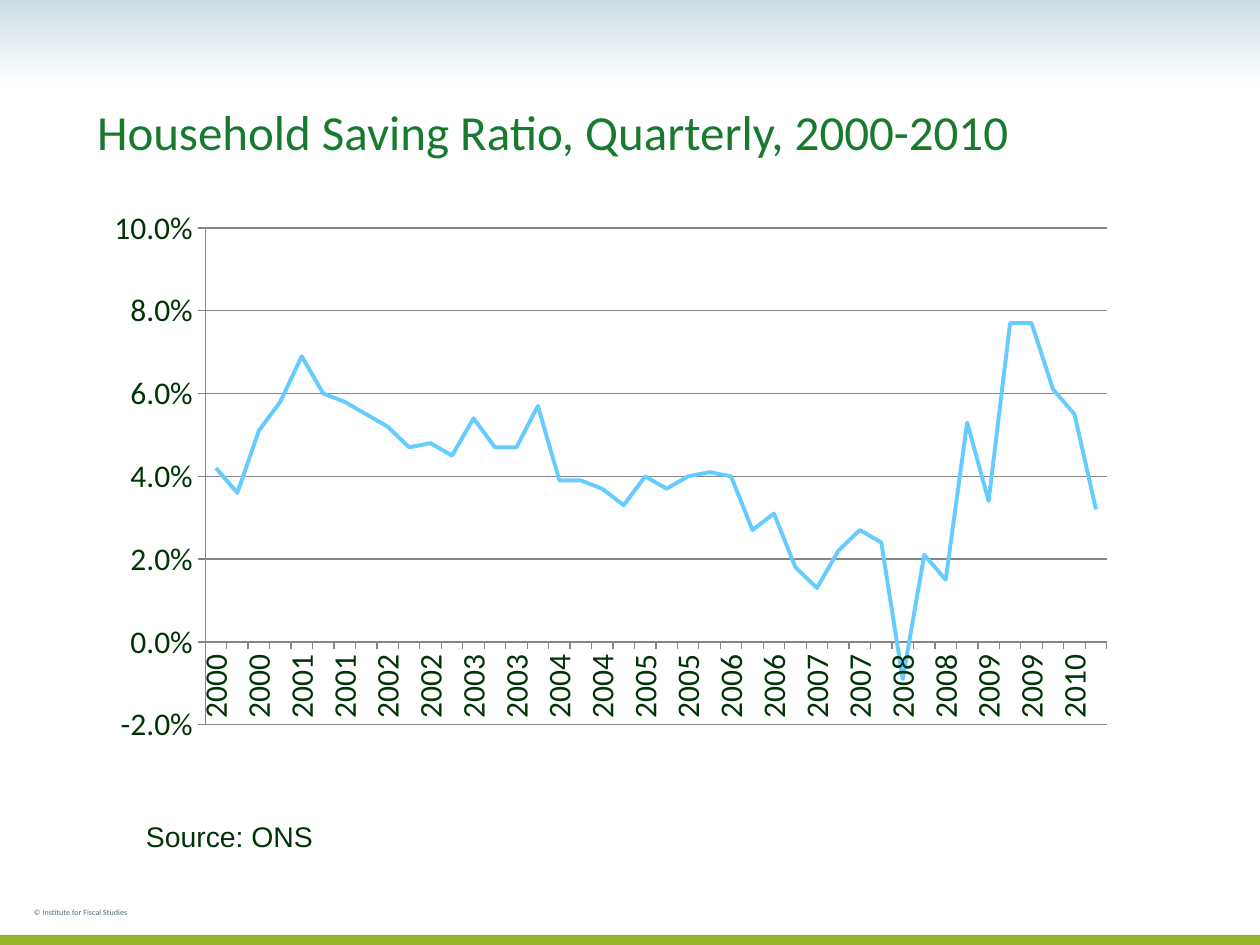
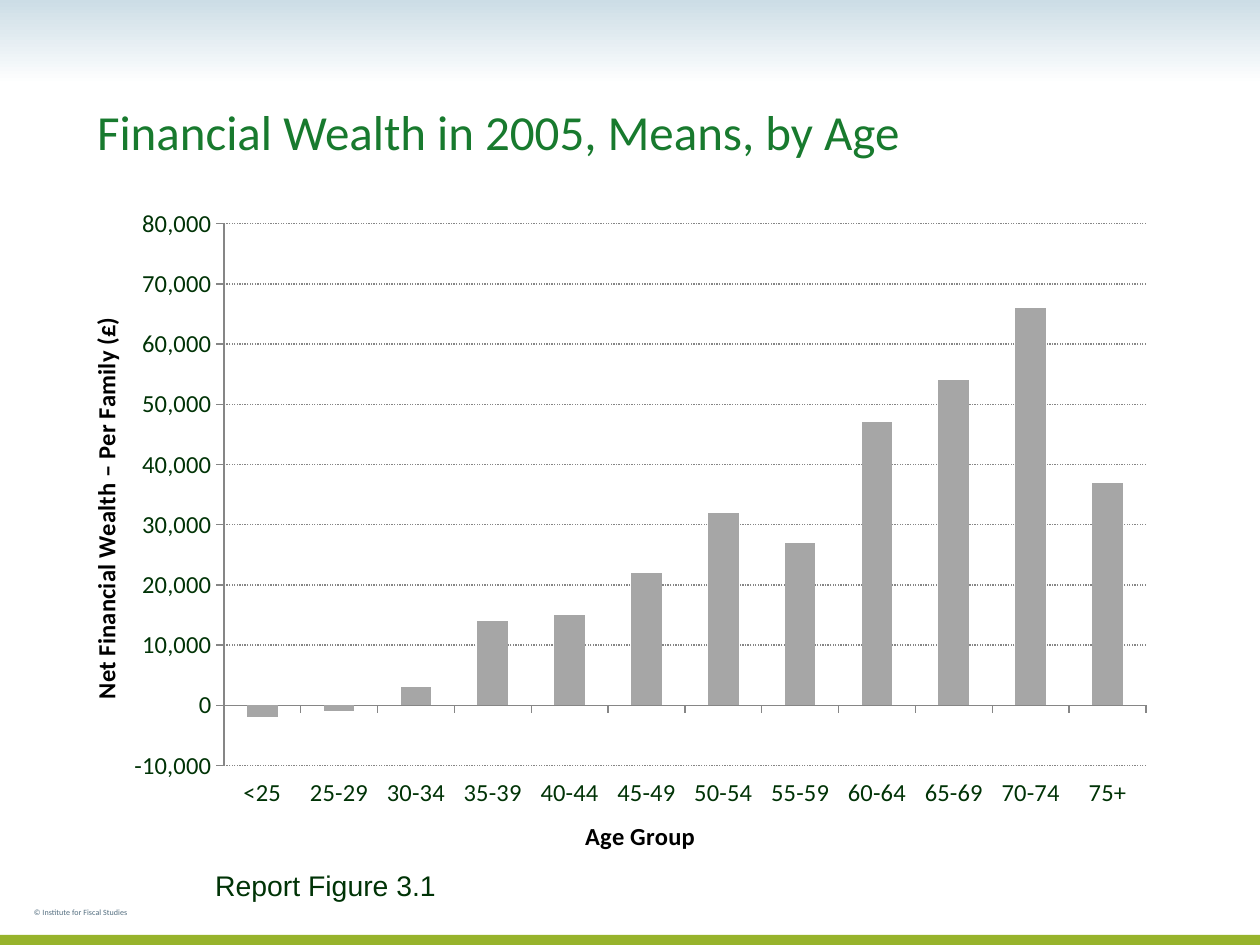
import pptx
import pptx.chart.data
import pptx.dml.color
import pptx.enum.chart
import pptx.enum.dml
import pptx.enum.shapes
import pptx.enum.text
import pptx.oxml
import pptx.oxml.ns
import pptx.util

Inches, Pt = pptx.util.Inches, pptx.util.Pt
Chart = pptx.enum.chart
HUES = {"sky": "CCDDE6", "white": "FFFFFF", "lime": "97B32C", "slate": "526D7F",
        "title": "187A2E", "ink": "003306", "black": "000000", "axis": "868686",
        "line": "66CCFF", "bar": "A6A6A6"}
SAVING = [4.2, 3.6, 5.1, 5.8, 6.9, 6, 5.8, 5.5, 5.2, 4.7, 4.8, 4.5, 5.4, 4.7,
          4.7, 5.7, 3.9, 3.9, 3.7, 3.3, 4, 3.7, 4, 4.1, 4, 2.7, 3.1, 1.8, 1.3,
          2.2, 2.7, 2.4, -0.9, 2.1, 1.5, 5.3, 3.4, 7.7, 7.7, 6.1, 5.5, 3.2]
WEALTH = [-2, -1, 3, 14, 15, 22, 32, 27, 47, 54, 66, 37]
AGES = ["<25", *(f"{age}-{age + 4}" for age in range(25, 75, 5)), "75+"]


def hue(name):
    """Return the named colour."""
    return pptx.dml.color.RGBColor.from_string(HUES[name])


def write(frame, text, size, color, face="Calibri", bold=False, sub=False):
    """Put one formatted paragraph into a text frame."""
    para = frame.paragraphs[0]
    run = para.add_run()
    run.text = text
    font = run.font
    font.name, font.size, font.bold = face, Pt(size), bold
    font.color.rgb = hue(color)
    if sub:
        run._r.get_or_add_rPr().set("baseline", "-25000")
    return para


def note(slide, box, text, size, color, **style):
    """Add a wrapped text box."""
    frame = slide.shapes.add_textbox(*map(Inches, box)).text_frame
    frame.word_wrap = True
    write(frame, text, size, color, **style)


def band(slide, box, *colors):
    """Add a full-width band with one colour or a downward fade."""
    shape = slide.shapes.add_shape(
        pptx.enum.shapes.MSO_SHAPE.RECTANGLE, *map(Inches, box))
    shape.shadow.inherit = False
    shape.line.fill.background()
    if len(colors) == 1:
        shape.fill.solid()
        shape.fill.fore_color.rgb = hue(colors[0])
        return
    shape.fill.gradient()
    shape.fill.gradient_angle = 270
    for place, (stop, color) in enumerate(zip(shape.fill.gradient_stops, colors)):
        stop.position = place
        stop.color.rgb = hue(color)


def page(deck, title):
    """Add a slide with bands, title and footer."""
    slide = deck.slides.add_slide(deck.slide_layouts[5])
    band(slide, (0, 0, 10, 0.67), "sky", "white")
    band(slide, (0, 7.42, 10, 0.08), "lime")
    head = slide.shapes.title
    head.left, head.top, head.width, head.height = map(Inches, (0.67, 0.25, 8.58, 1.08))
    head.text_frame.vertical_anchor = pptx.enum.text.MSO_ANCHOR.BOTTOM
    para = write(head.text_frame, title, 28, "title")
    para.alignment = pptx.enum.text.PP_ALIGN.LEFT
    para.line_spacing = 0.9
    note(slide, (0.17, 7.08, 2.75, 0.25), "© Institute for Fiscal Studies",
         8, "slate", sub=True)
    return slide


def place(chart, inner):
    """Fix the inner plot area as fractions of the chart."""
    area = chart._chartSpace.chart.plotArea
    for old in area.findall(pptx.oxml.ns.qn("c:layout")):
        area.remove(old)
    sizes = "".join(f'<c:{key} val="{val}"/>' for key, val in zip("xywh", inner))
    modes = '<c:xMode val="edge"/><c:yMode val="edge"/>'
    area.insert(0, pptx.oxml.parse_xml(
        f'<c:layout {pptx.oxml.ns.nsdecls("c")}><c:manualLayout>'
        f'<c:layoutTarget val="inner"/>{modes}{sizes}'
        '</c:manualLayout></c:layout>'))


def graph(slide, box, kind, cats, vals, inner, size, scale, form):
    """Add a one-series chart with styled axes."""
    data = pptx.chart.data.CategoryChartData()
    data.categories = cats
    data.add_series("Series 1", vals)
    chart = slide.shapes.add_chart(kind, *map(Inches, box), data).chart
    chart.has_legend = chart.has_title = False
    chart.font.name, chart.font.size = "Calibri", Pt(size)
    chart.font.color.rgb = hue("ink")
    chart.plots[0].vary_by_categories = False
    place(chart, inner)
    axis = chart.value_axis
    axis.minimum_scale, axis.maximum_scale, axis.major_unit = scale
    axis.has_major_gridlines = True
    axis.tick_labels.number_format = form
    axis.tick_labels.number_format_is_linked = False
    for side in (chart.category_axis, axis):
        side.major_tick_mark = Chart.XL_TICK_MARK.OUTSIDE
        side.minor_tick_mark = Chart.XL_TICK_MARK.NONE
    for line in (chart.category_axis.format.line, axis.format.line,
                 axis.major_gridlines.format.line):
        line.color.rgb = hue("axis")
        line.width = Pt(0.75)
    return chart


def saving(deck):
    """Build the saving ratio slide."""
    slide = page(deck, "Household Saving Ratio, Quarterly, 2000-2010")
    years = [str(2000 + i // 4) for i in range(len(SAVING))]
    chart = graph(slide, (0.59, 1.53, 8.58, 4.82), Chart.XL_CHART_TYPE.LINE, years,
                  [round(val / 100, 3) for val in SAVING],
                  (0.121, 0.058, 0.834, 0.818), 18, (-0.02, 0.1, 0.02), "0.0%")
    line = chart.plots[0].series[0]
    line.smooth = False
    line.marker.style = Chart.XL_MARKER_STYLE.NONE
    line.format.line.color.rgb = hue("line")
    line.format.line.width = Pt(2.25)
    axis = chart.category_axis
    axis.tick_labels.font.size = Pt(18)
    root = axis._element
    root.txPr.bodyPr.set("rot", "-5400000")
    last = root.find(pptx.oxml.ns.qn("c:noMultiLvlLbl"))
    for tag, step in (("tickLblSkip", 2), ("tickMarkSkip", 1)):
        last.addprevious(pptx.oxml.parse_xml(
            f'<c:{tag} {pptx.oxml.ns.nsdecls("c")} val="{step}"/>'))
    note(slide, (1.06, 6.19, 1.74, 0.42), "Source: ONS", 28, "ink",
         face="Arial", sub=True)


def wealth(deck):
    """Build the wealth by age slide."""
    slide = page(deck, "Financial Wealth in 2005, Means, by Age")
    chart = graph(slide, (0.67, 1.62, 8.58, 5.2), Chart.XL_CHART_TYPE.COLUMN_CLUSTERED,
                  AGES, [val * 1000 for val in WEALTH],
                  (0.129, 0.03, 0.853, 0.827), 14, (-10000, 80000, 10000), "#,##0")
    chart.plots[0].gap_width = 150
    bars = chart.plots[0].series[0]
    bars.invert_if_negative = False
    bars.format.fill.solid()
    bars.format.fill.fore_color.rgb = hue("bar")
    chart.category_axis.tick_label_position = Chart.XL_TICK_LABEL_POSITION.LOW
    grid = chart.value_axis.major_gridlines.format.line
    grid.dash_style = pptx.enum.dml.MSO_LINE.ROUND_DOT
    for axis, text in ((chart.category_axis, "Age Group"),
                       (chart.value_axis, "Net Financial Wealth – Per Family (£)")):
        write(axis.axis_title.text_frame, text, 14, "black", bold=True)
    note(slide, (1.61, 6.58, 3.86, 0.42), "Report Figure 3.1", 28, "ink",
         face="Arial", sub=True)


def main():
    """Build and save the deck."""
    deck = pptx.Presentation()
    deck.slide_width, deck.slide_height = Inches(10), Inches(7.5)
    saving(deck)
    wealth(deck)
    deck.save("out.pptx")


if __name__ == "__main__":
    main()
